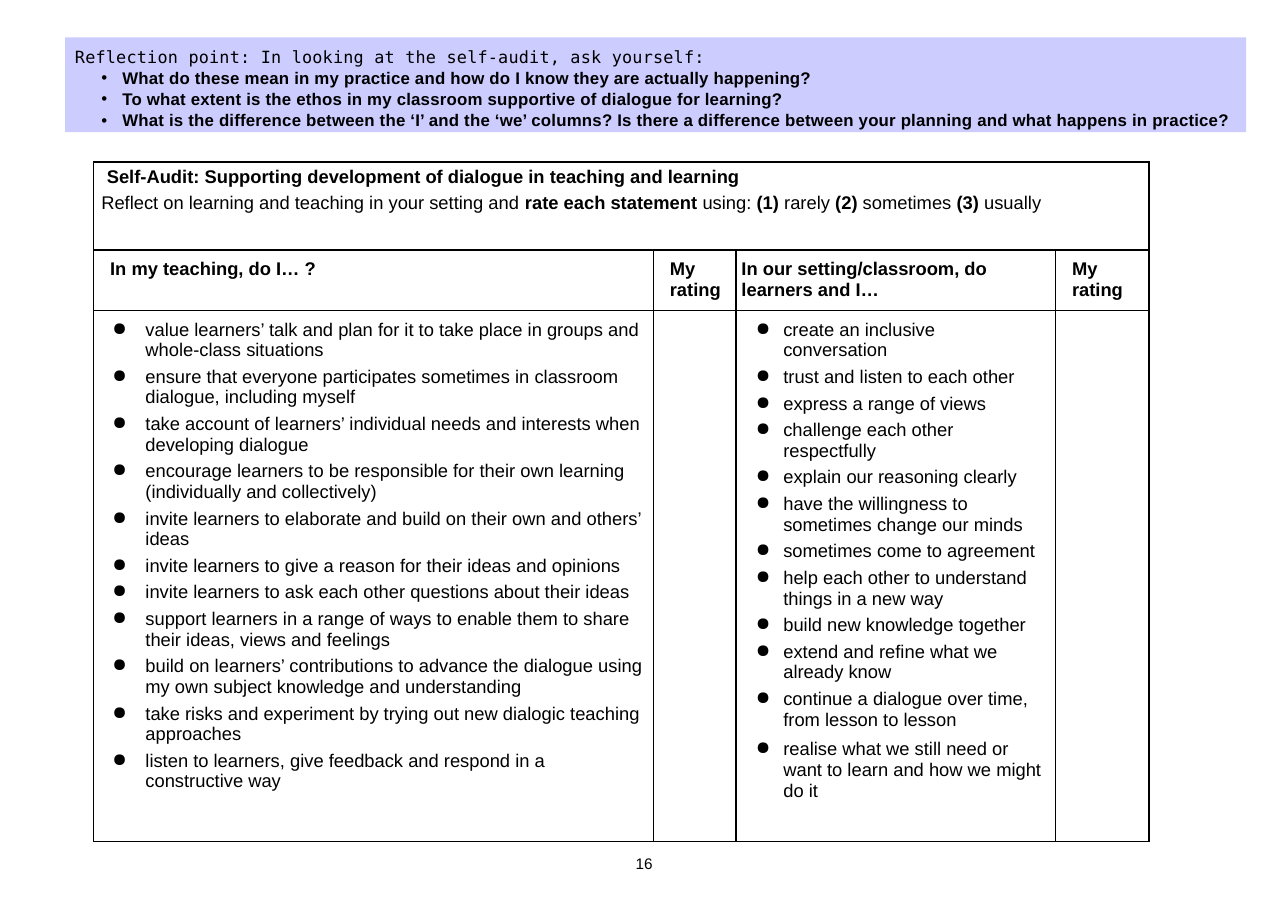
import pptx
import pptx.dml.color
import pptx.enum.text
import pptx.oxml.ns
import pptx.util
from lxml import etree

Inches = pptx.util.Inches
Pt = pptx.util.Pt
BLACK = pptx.dml.color.RGBColor(0x00, 0x00, 0x00)
LAVENDER = pptx.dml.color.RGBColor(0xCC, 0xCC, 0xFF)
qn = pptx.oxml.ns.qn

QUESTIONS = [
    "What do these mean in my practice and how do I know they are actually happening?",
    "To what extent is the ethos in my classroom supportive of dialogue for learning?",
    "What is the difference between the ‘I’ and the ‘we’ columns? "
    "Is there a difference between your planning and what happens in practice?",
]
INSTRUCTIONS = [
    ("Reflect on learning and teaching in your setting and ", False),
    ("rate each statement", True),
    (" using: ", False),
    ("(1)", True),
    (" rarely ", False),
    ("(2)", True),
    (" sometimes ", False),
    ("(3)", True),
    (" usually", False),
]
HEADINGS = [
    ("In my teaching, do I… ?", 0.1),
    ("My rating", 0.1),
    ("In our setting/classroom, do learners and I…", 0),
    ("My rating", 0.1),
]
TEACHER_STATEMENTS = [
    "value learners’ talk and plan for it to take place in groups and whole-class situations",
    "ensure that everyone participates sometimes in classroom dialogue, including myself",
    "take account of learners’ individual needs and interests when developing dialogue",
    "encourage learners to be responsible for their own learning (individually and collectively)",
    "invite learners to elaborate and build on their own and others’ ideas",
    "invite learners to give a reason for their ideas and opinions",
    "invite learners to ask each other questions about their ideas",
    "support learners in a range of ways to enable them to share their ideas, views and feelings",
    "build on learners’ contributions to advance the dialogue using my own subject knowledge "
    "and understanding",
    "take risks and experiment by trying out new dialogic teaching approaches",
    "listen to learners, give feedback and respond in a constructive way",
]
CLASS_STATEMENTS = [
    "create an inclusive conversation",
    "trust and listen to each other",
    "express a range of views",
    "challenge each other respectfully",
    "explain our reasoning clearly",
    "have the willingness to sometimes change our minds",
    "sometimes come to agreement",
    "help each other to understand things in a new way",
    "build new knowledge together",
    "extend and refine what we already know",
    "continue a dialogue over time, from lesson to lesson",
    "realise what we still need or want to learn and how we might do it",
]


def format_paragraph(para, size, bold=False, font="Arial", left=0, hanging=0, bullet=None, before=0):
    """Set indents in inches, bullet, space before in points, and font."""
    properties = para._p.get_or_add_pPr()
    properties.set("marL", str(Inches(left)))
    properties.set("indent", str(-Inches(hanging)))
    para.space_before = Pt(before)
    if bullet:
        etree.SubElement(properties, qn("a:buChar")).set("char", bullet)
    else:
        etree.SubElement(properties, qn("a:buNone"))
    para.font.size = Pt(size)
    para.font.bold = bold
    para.font.name = font
    para.font.color.rgb = BLACK


def set_insets(target, left, top, right, bottom):
    target.margin_left, target.margin_top = Inches(left), Inches(top)
    target.margin_right, target.margin_bottom = Inches(right), Inches(bottom)


deck = pptx.Presentation()
deck.slide_width, deck.slide_height = Inches(11.69), Inches(8.27)
page = deck.slides.add_slide(deck.slide_layouts[1])
unused_title = page.shapes.title._element
unused_title.getparent().remove(unused_title)

# Reflection box
reflection = page.placeholders[1]
reflection.left, reflection.top = Inches(0.59), Inches(0.34)
reflection.width, reflection.height = Inches(10.72), Inches(0.86)
reflection.fill.solid()
reflection.fill.fore_color.rgb = LAVENDER
frame = reflection.text_frame
frame.word_wrap = True
frame.auto_size = pptx.enum.text.MSO_AUTO_SIZE.NONE
frame.vertical_anchor = pptx.enum.text.MSO_ANCHOR.TOP
set_insets(frame, 0, 0.08, 0, 0)
para = frame.paragraphs[0]
para.add_run().text = "Reflection point: In looking at the self-audit, ask yourself:"
format_paragraph(para, 11, font="DejaVu Sans Mono", left=0.09)
for question in QUESTIONS:
    para = frame.add_paragraph()
    para.add_run().text = question
    format_paragraph(para, 11, bold=True, left=0.52, hanging=0.19, bullet="•", before=0.7)
for para in frame.paragraphs:
    para.runs[0]._r.get_or_add_rPr().set("spc", "10")

# Self-audit table
audit = page.shapes.add_table(3, 4, Inches(0.85), Inches(1.47), Inches(9.58), Inches(6.17)).table
audit.first_row = False
audit.horz_banding = False
for column, width in zip(audit.columns, [5.08, 0.75, 2.9, 0.85]):
    column.width = Inches(width)
for row, height in zip(audit.rows, [0.8, 0.55, 4.82]):
    row.height = Inches(height)
for cell in audit.iter_cells():
    set_insets(cell, 0.05, 0.08, 0.05, 0.08)
    for side in ("a:lnL", "a:lnR", "a:lnT", "a:lnB"):
        border = etree.SubElement(cell._tc.get_or_add_tcPr(), qn(side))
        border.set("w", str(Pt(1)))
        border_fill = etree.SubElement(border, qn("a:solidFill"))
        etree.SubElement(border_fill, qn("a:srgbClr")).set("val", str(BLACK))
    cell.fill.background()

banner = audit.cell(0, 0)
banner.merge(audit.cell(0, 3))
set_insets(banner, 0.07, 0.04, 0.07, 0.04)
para = banner.text_frame.paragraphs[0]
para.text = "Self-Audit: Supporting development of dialogue in teaching and learning"
format_paragraph(para, 12, bold=True, left=0.05)
para = banner.text_frame.add_paragraph()
for words, bold in INSTRUCTIONS:
    span = para.add_run()
    span.text = words
    span.font.bold = bold
format_paragraph(para, 12, before=4)

for index, (heading, left) in enumerate(HEADINGS):
    para = audit.cell(1, index).text_frame.paragraphs[0]
    para.text = heading
    format_paragraph(para, 12, bold=True, left=left)

for index, statements, left, hanging, right_inset in [
    (0, TEACHER_STATEMENTS, 0.42, 0.3, 0.09),
    (2, CLASS_STATEMENTS, 0.38, 0.25, 0.11),
]:
    cell = audit.cell(2, index)
    cell.margin_right = Inches(right_inset)
    cell.text = "\n".join(statements)
    for position, para in enumerate(cell.text_frame.paragraphs):
        format_paragraph(para, 12, left=left, hanging=hanging, bullet="●", before=4 if position else 0)
audit.cell(2, 2).text_frame.paragraphs[-1].space_before = Pt(6)

# Page number
number = page.shapes.add_textbox(Inches(5.74), Inches(7.75), Inches(0.21), Inches(0.18)).text_frame
number.word_wrap = True
set_insets(number, 0, 0, 0, 0)
number.text = "16"
format_paragraph(number.paragraphs[0], 10, left=0.03)

deck.save("out.pptx")
